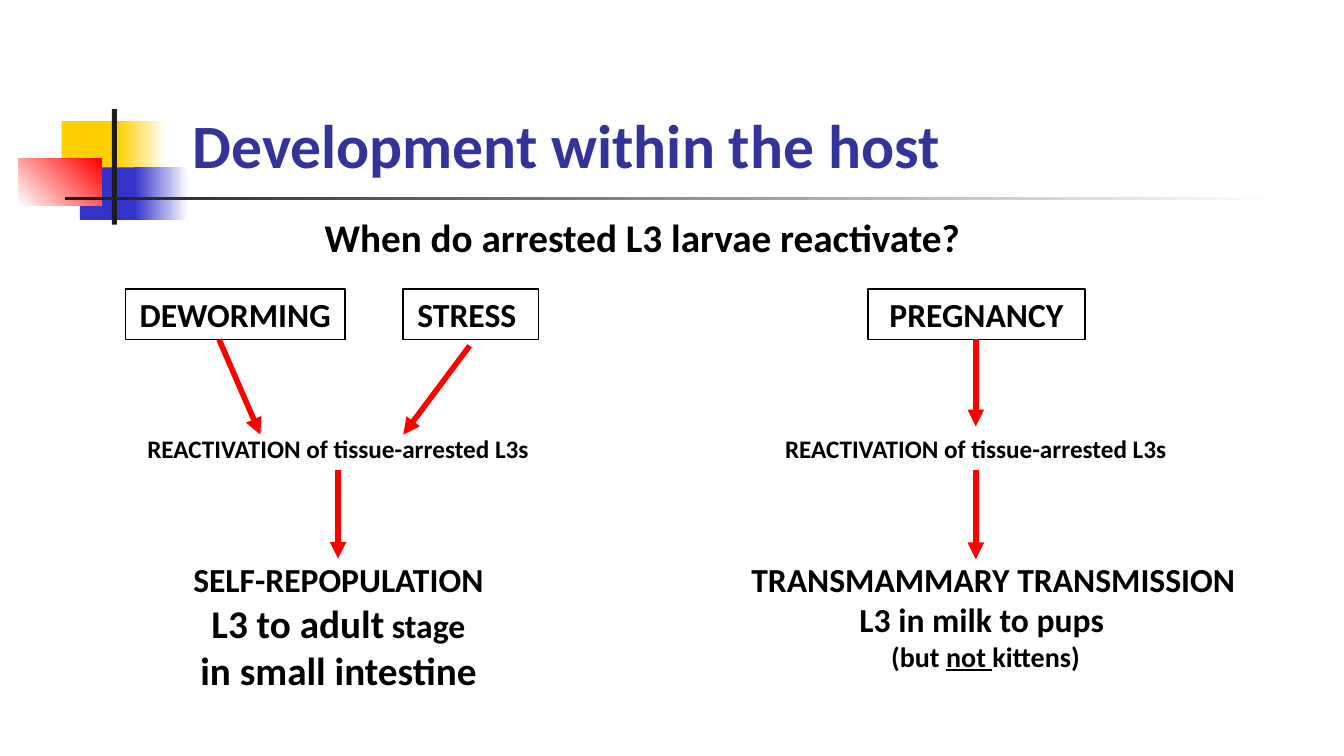
"""Build the slide on when arrested L3 larvae reactivate in the host."""
from lxml.etree import SubElement
from pptx import Presentation
from pptx.dml.color import RGBColor
from pptx.enum.shapes import MSO_CONNECTOR, MSO_SHAPE
from pptx.enum.text import MSO_ANCHOR, PP_ALIGN
from pptx.oxml.ns import qn
from pptx.util import Pt

FONT = "Calibri"
BLACK, WHITE, RED, YELLOW = "000000", "FFFFFF", "FF0000", "FFCF01"
BLUE, CHARCOAL, TITLE_BLUE = "3333CC", "1C1C1C", "333399"

# left, top, width, height, colours, counter-clockwise angle
ORNAMENTS = [
    (44, 86.5, 46, 37.5, [YELLOW], 0),
    (84, 86.5, 34.5, 37.5, [YELLOW, WHITE], 0),
    (57, 119.5, 45, 37.5, [BLUE], 0),
    (96, 119.5, 38.5, 37.5, [BLUE, WHITE], 0),
    (13.5, 113.5, 59, 33.5, [WHITE, RED], 45),
    (80, 78, 3.5, 82.5, [CHARCOAL], 0),
    (46.5, 140.5, 864, 2.5, [CHARCOAL, WHITE], 0),
]

TITLE = "Development within the host"
QUESTION = "When do arrested L3 larvae reactivate?"
REACTIVATION = "REACTIVATION of tissue-arrested L3s"

TRIGGER_TOP, TRIGGER_HEIGHT = 206.5, 36
TRIGGERS = [("DEWORMING", 89.5, 157), ("STRESS ", 288, 96.5), ("PREGNANCY", 620, 155)]

LEFT_CENTRE, RIGHT_CENTRE = 241.5, 697
REACTIVATION_WIDTH = 291

# left, width, height, first-line margin, lines of (text, size, underline) runs
OUTCOMES = [
    (111.5, 260.5, 103.5, 0, [
        [("SELF-REPOPULATION", 24, False)],
        [("L3 to adult", 28, False), (" stage", 24, False)],
        [("in small intestine", 28, False)],
    ]),
    (508.5, 391, 89.5, 11, [
        [("TRANSMAMMARY TRANSMISSION", 24, False)],
        [("L3 in milk to pups ", 24, False)],
        [("(but ", 20, False), ("not ", 20, True), ("kittens)", 20, False)],
    ]),
]

ARROWS = [
    (156.5, 242.5, 186, 310.5),
    (335.5, 247, 288, 310.5),
    (RIGHT_CENTRE, 242.5, RIGHT_CENTRE, 304.5),
    (LEFT_CENTRE, 335.5, LEFT_CENTRE, 399),
    (RIGHT_CENTRE, 336, RIGHT_CENTRE, 399.5),
]


def colour(hex_value):
    return RGBColor.from_string(hex_value)


def add_rectangle(slide, left, top, width, height):
    shape = slide.shapes.add_shape(
        MSO_SHAPE.RECTANGLE, Pt(left), Pt(top), Pt(width), Pt(height))
    shape.shadow.inherit = False
    return shape


def add_ornament(slide, left, top, width, height, colours, angle):
    shape = add_rectangle(slide, left, top, width, height)
    shape.line.fill.background()
    if len(colours) == 1:
        shape.fill.solid()
        shape.fill.fore_color.rgb = colour(colours[0])
        return
    shape.fill.gradient()
    shape.fill.gradient_angle = angle
    for position, (stop, value) in enumerate(zip(shape.fill.gradient_stops, colours)):
        stop.position = position
        stop.color.rgb = colour(value)


def write_lines(shape, lines, text_colour=BLACK, alignment=PP_ALIGN.CENTER, wrap=True):
    frame = shape.text_frame
    frame.word_wrap = wrap
    frame.vertical_anchor = MSO_ANCHOR.TOP
    for index, line in enumerate(lines):
        paragraph = frame.add_paragraph() if index else frame.paragraphs[0]
        paragraph.alignment = alignment
        for text, size, underline in line:
            run = paragraph.add_run()
            run.text = text
            run.font.name = FONT
            run.font.size = Pt(size)
            run.font.bold = True
            run.font.underline = underline
            run.font.color.rgb = colour(text_colour)


def add_text(slide, left, top, width, height, lines, **style):
    shape = slide.shapes.add_textbox(Pt(left), Pt(top), Pt(width), Pt(height))
    write_lines(shape, lines, **style)
    return shape


def add_trigger(slide, text, left, width):
    shape = add_rectangle(slide, left, TRIGGER_TOP, width, TRIGGER_HEIGHT)
    shape.fill.background()
    shape.line.color.rgb = colour(BLACK)
    shape.line.width = Pt(1)
    write_lines(shape, [[(text, 24, False)]], wrap=False)


def add_arrow(slide, *ends):
    arrow = slide.shapes.add_connector(MSO_CONNECTOR.STRAIGHT, *map(Pt, ends))
    arrow.line.color.rgb = colour(RED)
    arrow.line.width = Pt(4)
    SubElement(arrow.line._get_or_add_ln(), qn("a:tailEnd"), type="triangle")
    SubElement(arrow._element.spPr, qn("a:effectLst"))


def main():
    presentation = Presentation()
    presentation.slide_width, presentation.slide_height = Pt(960), Pt(540)
    slide = presentation.slides.add_slide(presentation.slide_layouts[6])

    for ornament in ORNAMENTS:
        add_ornament(slide, *ornament)

    title = add_text(slide, 130.5, 64, 603.5, 69, [[(TITLE, 44, False)]],
                     text_colour=TITLE_BLUE, alignment=PP_ALIGN.LEFT)
    title.text_frame.vertical_anchor = MSO_ANCHOR.BOTTOM
    add_text(slide, 192, 149, 533.5, 41, [[(QUESTION, 28, False)]])

    for trigger in TRIGGERS:
        add_trigger(slide, *trigger)
    for centre in (LEFT_CENTRE, RIGHT_CENTRE):
        add_text(slide, centre - REACTIVATION_WIDTH / 2, 306, REACTIVATION_WIDTH, 29,
                 [[(REACTIVATION, 18, False)]])
    for left, width, height, margin, lines in OUTCOMES:
        outcome = add_text(slide, left, 395.5, width, height, lines)
        first = outcome.text_frame.paragraphs[0]
        first._p.get_or_add_pPr().set("marL", str(Pt(margin)))
    for arrow in ARROWS:
        add_arrow(slide, *arrow)

    presentation.save("out.pptx")


if __name__ == "__main__":
    main()
